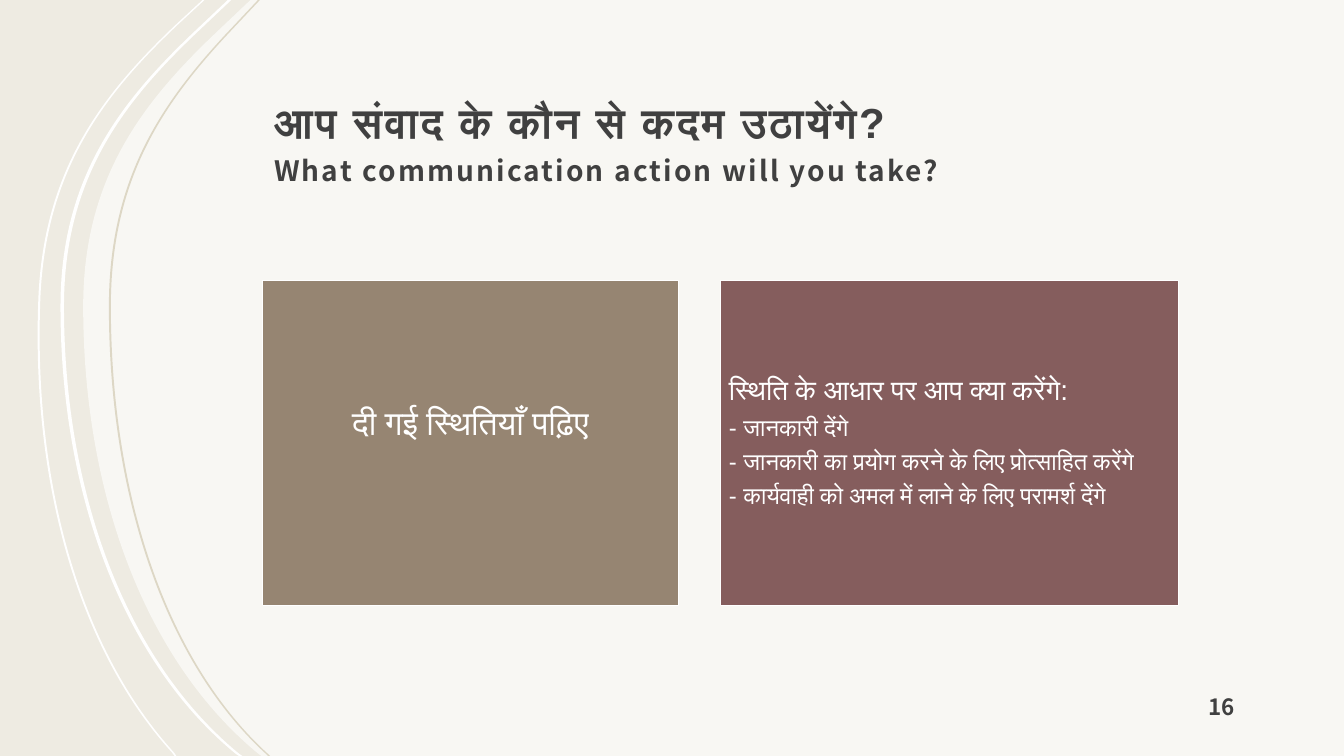
from lxml.etree import SubElement
from pptx import Presentation
from pptx.dml.color import RGBColor
from pptx.enum.shapes import MSO_SHAPE
from pptx.enum.text import MSO_ANCHOR, PP_ALIGN
from pptx.oxml.ns import qn
from pptx.util import Pt

WIDTH, HEIGHT = 960, 540
HINDI_FONT, LATIN_FONT = "Arial", "Noto Sans CJK JP"
DARK, WHITE = "404040", "FFFFFF"

# Each edge: top point, start of the curve, two Bezier segments, bottom point.
OUTER_EDGE = [(144.7, 0), (126, 17.3), (73.4, 67), (31, 121), (27.4, 213.8),
              (22.3, 345.6), (56.2, 464.4), (123.1, 537.8), (124.6, 540)]
MIDDLE_EDGE = [(162.7, 0), (136.1, 25.2), (84.2, 74.9), (43.2, 128.9), (43.2, 218.9),
               (43.2, 354.2), (88.6, 473), (168.5, 538.6), (170.6, 540)]
INNER_EDGE = [(184.3, 0), (160.6, 25.2), (114.5, 74.9), (77.8, 128.9), (77.8, 218.9),
              (77.8, 354.2), (118.1, 473), (190.1, 538.6), (191.5, 540)]
EDGE_CURVES = (2, 5)  # where the control points of each segment begin


def color(value):
    return RGBColor.from_string(value)


def shifted(edge, shift):
    return [(x + shift, y) for x, y in edge]


def write(paragraph, text, font=HINDI_FONT, size=20, fill=WHITE, bold=False, spacing=0):
    """Add a run; spacing is the gap between letters in points."""
    run = paragraph.add_run()
    run.text = text
    run.font.name = font
    run.font.size = Pt(size)
    run.font.bold = bold
    run.font.color.rgb = color(fill)
    if spacing:
        run.font._element.set("spc", str(int(spacing * 100)))


class SlideBuilder:
    def __init__(self, slide, background):
        self.slide = slide
        slide.background.fill.solid()
        slide.background.fill.fore_color.rgb = color(background)

    def outline(self, points, curves, fill, opacity=100):
        """Draw a closed outline; each index in curves starts a Bezier of three points."""
        corners = [(Pt(x), Pt(y)) for x, y in points]
        builder = self.slide.shapes.build_freeform(*corners[0], scale=1.0)
        builder.add_line_segments(corners[1:], close=True)
        shape = builder.convert_to_shape()
        segments = list(shape._element.iter(qn("a:lnTo")))
        for start in curves:
            first, *others = segments[start - 1:start + 2]
            first.tag = qn("a:cubicBezTo")
            for segment in others:
                first.append(segment[0])
                segment.getparent().remove(segment)
        shape.shadow.inherit = False
        shape.line.fill.background()
        shape.fill.solid()
        shape.fill.fore_color.rgb = color(fill)
        if opacity < 100:
            tone = shape._element.spPr.find(qn("a:solidFill"))[0]
            SubElement(tone, qn("a:alpha")).set("val", str(opacity * 1000))

    def band(self, edge, width, fill):
        """Draw the strip between an edge and the same edge moved right by width."""
        there_and_back = edge + shifted(edge, width)[::-1]
        # Reversed, the two segments start one point earlier on the way back.
        self.outline(there_and_back, EDGE_CURVES + (11, 14), fill)

    def frame(self, shape, anchor, insets):
        """Set wrapping, anchor and insets (left, top, right, bottom)."""
        frame = shape.text_frame
        frame.word_wrap = True
        frame.vertical_anchor = anchor
        (frame.margin_left, frame.margin_top,
         frame.margin_right, frame.margin_bottom) = map(Pt, insets)
        return frame

    def text_box(self, left, top, width, height):
        box = self.slide.shapes.add_textbox(Pt(left), Pt(top), Pt(width), Pt(height))
        return self.frame(box, MSO_ANCHOR.BOTTOM, (8.64, 8.64, 8.64, 7.2)).paragraphs[0]

    def card(self, left, width, fill, lines, align, insets):
        """Draw a filled card; lines are (text, size) pairs."""
        shape = self.slide.shapes.add_shape(
            MSO_SHAPE.RECTANGLE, Pt(left), Pt(200.4), Pt(width), Pt(232.2))
        shape.shadow.inherit = False
        shape.fill.solid()
        shape.fill.fore_color.rgb = color(fill)
        shape.line.color.rgb = color(WHITE)
        shape.line.width = Pt(1)
        frame = self.frame(shape, MSO_ANCHOR.MIDDLE, insets)
        for index, (text, size) in enumerate(lines):
            paragraph = frame.add_paragraph() if index else frame.paragraphs[0]
            paragraph.alignment = align
            paragraph.line_spacing = 0.9
            paragraph.space_after = Pt(round(size * 0.35, 1))
            write(paragraph, text, size=size)


def main():
    presentation = Presentation()
    presentation.slide_width, presentation.slide_height = Pt(WIDTH), Pt(HEIGHT)
    slide = presentation.slides.add_slide(presentation.slide_layouts[6])
    builder = SlideBuilder(slide, "EEEBE2")

    panel = shifted(MIDDLE_EDGE, 16.2) + [(WIDTH, HEIGHT), (WIDTH, 0)]
    builder.outline(panel, EDGE_CURVES, WHITE, opacity=60)
    builder.band(OUTER_EDGE, 1.4, WHITE)
    builder.band(MIDDLE_EDGE, 2.5, WHITE)
    builder.band(INNER_EDGE, 1.4, "DDD7C5")

    title = builder.text_box(187.2, 35.2, 661, 105.8)
    title.line_spacing = 1.2
    write(title, "आप संवाद के कौन से कदम उठायेंगे?", size=30, fill=DARK, bold=True, spacing=1.5)
    title.add_line_break()
    write(title, "What communication action will you take?", font=LATIN_FONT,
          fill=DARK, bold=True, spacing=1.5)

    page_number = builder.text_box(854.6, 485.5, 93.6, 36)
    page_number.space_after = Pt(6)
    write(page_number, "16", font=LATIN_FONT, size=16, fill=DARK, bold=True)

    builder.card(187.5, 297, "968572", [("दी गई स्थितियाँ पढ़िए", 24)],
                 PP_ALIGN.CENTER, (7.2, 7.2, 7.2, 33.5))
    builder.card(514.8, 326.9, "855D5D", [
        ("स्थिति के आधार पर आप क्या करेंगे:", 20),
        ("- जानकारी देंगे", 17),
        ("- जानकारी का प्रयोग करने के लिए प्रोत्साहित करेंगे", 17),
        ("- कार्यवाही को अमल में लाने के लिए परामर्श देंगे", 17),
    ], PP_ALIGN.JUSTIFY, (5.8, 5.8, 5.8, 5.8))

    presentation.save("out.pptx")


if __name__ == "__main__":
    main()
